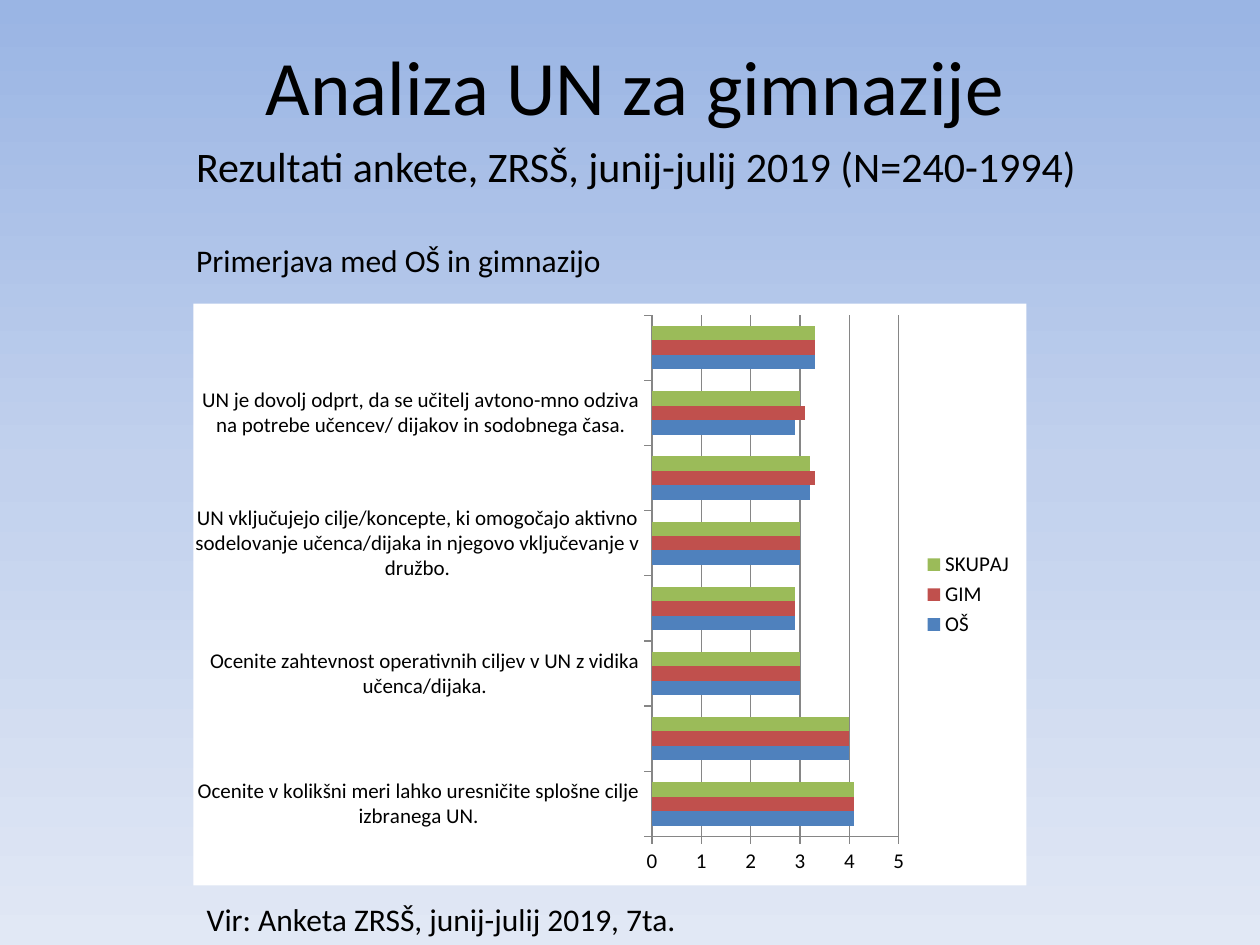
from copy import deepcopy

from lxml.etree import SubElement as Sub
from pptx import Presentation
from pptx.chart.data import CategoryChartData as Data
from pptx.dml.color import RGBColor as RGB
from pptx.enum.chart import XL_CHART_TYPE as Kind, XL_LEGEND_POSITION as Side, XL_TICK_MARK as Tick
from pptx.enum.text import MSO_ANCHOR as Anchor, PP_ALIGN as Align
from pptx.oxml.ns import qn
from pptx.util import Pt

THEME = {
    "font": "Calibri", "ink": "000000", "paper": "FFFFFF", "grid": "868686",
    "sky": [(0, "9AB5E4"), (50, "C2D1ED"), (100, "E1E8F5")],
    "bars": ["4F81BD", "C0504D", "9BBB59"],
    "title": 44, "sub": 24, "note": 18, "chart": 12,
}
SIZE = (720, 540)
TITLE = ("Analiza UN za gimnazije", (39, 3.6, 648, 90))
NOTES = [
    ("Rezultati ankete, ZRSŠ, junij-julij 2019 (N=240-1994)", "sub", (105, 77, 533, 36), True),
    ("Primerjava med OŠ in gimnazijo", "note", (105, 134, 248, 29), False),
    ("Vir: Anketa ZRSŠ, junij-julij 2019, 7ta.", "note", (111, 511, 292, 29), False),
]
PLOT = (110.5, 173.5, 476, 332.5)
CATS = [
    "Ocenite v kolikšni meri lahko uresničite splošne cilje izbranega UN.",
    "Ocenite zahtevnost operativnih ciljev v UN z vidika učenca/dijaka.",
    "UN vključujejo cilje/koncepte, ki omogočajo aktivno sodelovanje učenca/dijaka in njegovo vključevanje v družbo.",
    "UN je dovolj odprt, da se učitelj avtono-mno odziva na potrebe učencev/ dijakov in sodobnega časa.",
]
SERIES = {
    "OŠ": (4.1, 4, 3, 2.9, 3, 3.2, 2.9, 3.3),
    "GIM": (4.1, 4, 3, 2.9, 3, 3.3, 3.1, 3.3),
    "SKUPAJ": (4.1, 4, 3, 2.9, 3, 3.2, 3, 3.3),
}


def put(obj, **vals):
    """Set each named value on an object."""
    for name, val in vals.items():
        setattr(obj, name, val)


def box(spot):
    """Turn plain numbers into point lengths."""
    return [Pt(n) for n in spot]


def ink(font, size):
    """Give a font the theme face, colour and size."""
    put(font, name=THEME["font"], size=Pt(THEME[size]))
    font.color.rgb = RGB.from_string(THEME["ink"])


def write(shape, text, size, **vals):
    """Put one formatted line of text in a shape."""
    put(shape.text_frame, text=text, **vals)
    ink(shape.text_frame.paragraphs[0].runs[0].font, size)


def shade(slide):
    """Fill the background with the vertical theme gradient."""
    fill = slide.background.fill
    fill.gradient()
    fill.gradient_angle = 270
    stops = next(slide.element.iter(qn("a:gsLst")))
    stops.insert(1, deepcopy(stops[0]))
    for stop, (pos, tint) in zip(stops, THEME["sky"]):
        stop.set("pos", str(pos * 1000))
        stop.remove(stop[0])
        Sub(stop, qn("a:srgbClr"), val=tint)


def back(chart):
    """Give the chart area a plain fill without a border."""
    text = chart.font._element.getparent().getparent().getparent()
    area = Sub(text.getparent(), qn("c:spPr"))
    Sub(Sub(area, qn("a:solidFill")), qn("a:srgbClr"), val=THEME["paper"])
    Sub(Sub(area, qn("a:ln")), qn("a:noFill"))
    text.addprevious(area)


def draw(slide):
    """Add the clustered bar chart, with a label on every other group."""
    data = Data()
    data.categories = [text for cat in CATS for text in (cat, "")]
    for name, vals in SERIES.items():
        data.add_series(name, vals)
    chart = slide.shapes.add_chart(Kind.BAR_CLUSTERED, *box(PLOT), data).chart
    put(chart, has_title=False, has_legend=True)
    put(chart.legend, position=Side.RIGHT, include_in_layout=False)
    ink(chart.font, "chart")
    back(chart)
    plot = chart.plots[0]
    put(plot, gap_width=150, overlap=0, vary_by_categories=False)
    for bars, tint in zip(plot.series, THEME["bars"]):
        bars.format.fill.solid()
        bars.format.fill.fore_color.rgb = RGB.from_string(tint)
    cat, val = chart.category_axis, chart.value_axis
    put(val, minimum_scale=0, maximum_scale=5, major_unit=1, has_major_gridlines=True)
    put(val.tick_labels, number_format="General", number_format_is_linked=False)
    for axis in (cat, val):
        put(axis, major_tick_mark=Tick.OUTSIDE, minor_tick_mark=Tick.NONE)
    for part in (cat, val, val.major_gridlines):
        part.format.line.width = Pt(0.75)
        part.format.line.color.rgb = RGB.from_string(THEME["grid"])


def main():
    """Build and save the slide."""
    deck = Presentation()
    wide, high = box(SIZE)
    put(deck, slide_width=wide, slide_height=high)
    slide = deck.slides.add_slide(deck.slide_layouts[5])
    shade(slide)
    draw(slide)
    head = slide.shapes.title
    text, spot = TITLE
    put(head, **dict(zip(("left", "top", "width", "height"), box(spot))))
    write(head, text, "title", vertical_anchor=Anchor.MIDDLE)
    head.text_frame.paragraphs[0].alignment = Align.CENTER
    for text, size, spot, wrap in NOTES:
        write(slide.shapes.add_textbox(*box(spot)), text, size, word_wrap=wrap)
    deck.save("out.pptx")


if __name__ == "__main__":
    main()
